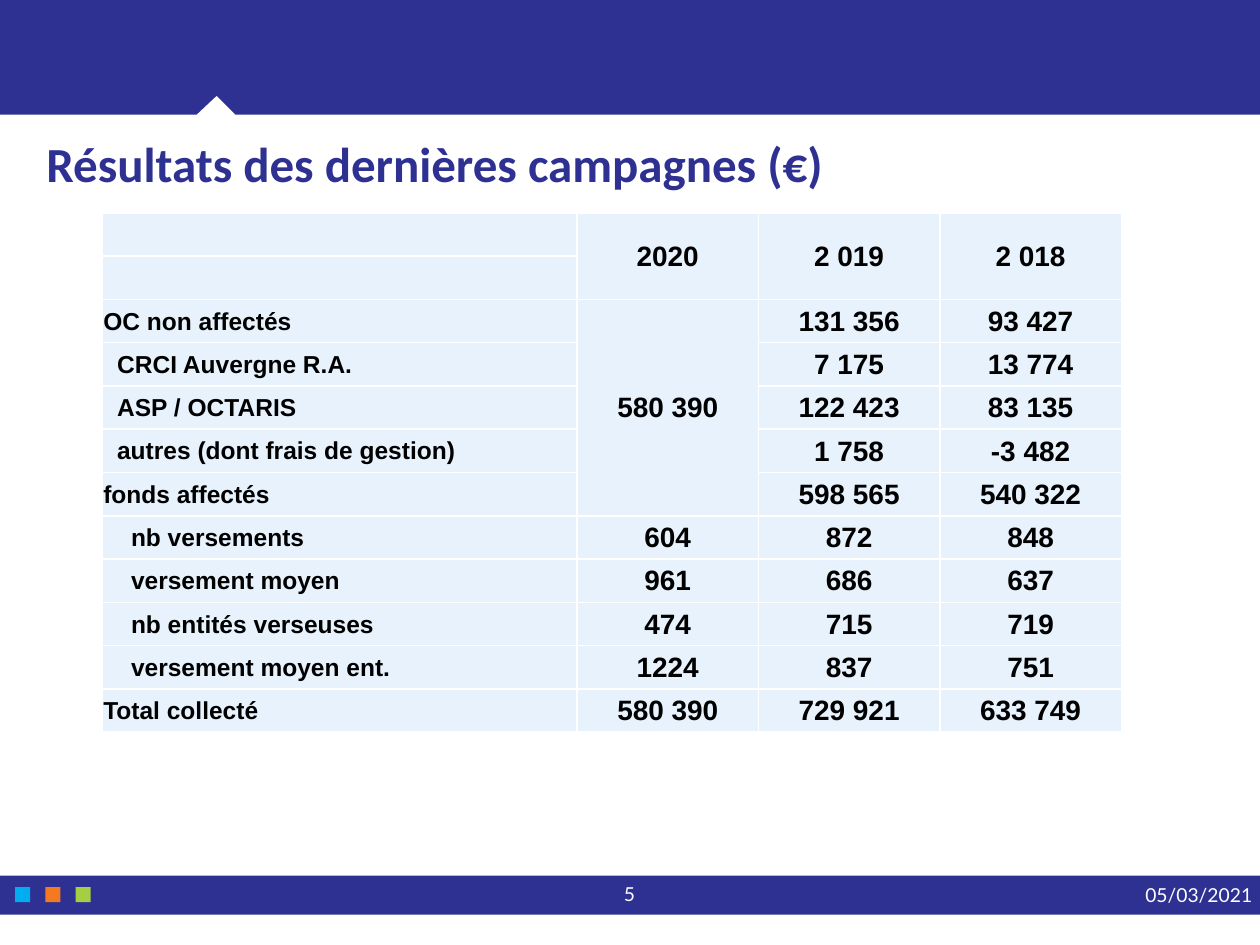
from lxml import etree
from pptx import Presentation
from pptx.dml.color import RGBColor
from pptx.enum.shapes import MSO_SHAPE
from pptx.enum.text import MSO_ANCHOR, PP_ALIGN
from pptx.oxml.ns import qn
from pptx.util import Inches, Pt

RECTANGLE = MSO_SHAPE.RECTANGLE
TOP, MIDDLE = MSO_ANCHOR.TOP, MSO_ANCHOR.MIDDLE
LEFT, CENTER, RIGHT = PP_ALIGN.LEFT, PP_ALIGN.CENTER, PP_ALIGN.RIGHT

NAVY = RGBColor(0x2E, 0x31, 0x92)
CYAN = RGBColor(0x00, 0xAE, 0xEF)
ORANGE = RGBColor(0xF4, 0x79, 0x20)
GREEN = RGBColor(0xA6, 0xCE, 0x43)
PALE_BLUE = RGBColor(0xE7, 0xF2, 0xFC)
WHITE = RGBColor(0xFF, 0xFF, 0xFF)
BLACK = RGBColor(0x00, 0x00, 0x00)

TITLE = {"name": "Calibri", "size": Pt(28), "bold": True}
FOOTER = {"name": "Lato", "size": Pt(11)}
LABEL = {"name": "Arial", "size": Pt(14), "bold": True}
VALUE = {"name": "Arial", "size": Pt(16), "bold": True}

BANNER_OUTLINE = [(0, 0), (10, 0), (10, 0.91), (1.87, 0.91),
                  (1.72, 0.76), (1.56, 0.91), (0, 0.91)]
COLUMN_WIDTHS = [3.77, 1.44, 1.44, 1.44]
INDENT_STEP = 0.11
RESULTS = [
    (0, "", "2020", "2 019", "2 018"),
    (0, "", "", "", ""),
    (0, "OC non affectés", "580 390", "131 356", "93 427"),
    (1, "CRCI Auvergne R.A.", "", "7 175", "13 774"),
    (1, "ASP / OCTARIS", "", "122 423", "83 135"),
    (1, "autres (dont frais de gestion)", "", "1 758", "-3 482"),
    (0, "fonds affectés", "", "598 565", "540 322"),
    (2, "nb versements", "604", "872", "848"),
    (2, "versement moyen", "961", "686", "637"),
    (2, "nb entités verseuses", "474", "715", "719"),
    (2, "versement moyen ent.", "1224", "837", "751"),
    (0, "Total collecté", "580 390", "729 921", "633 749"),
]
MERGES = [(0, 1, 1, 1), (0, 2, 1, 2), (0, 3, 1, 3), (2, 1, 6, 1)]


class SlideBuilder:
    """Draws the styled elements of the campaign results slide."""

    def __init__(self, slide):
        self.slide = slide

    def paint(self, shape, color):
        shape.shadow.inherit = False
        shape.fill.solid()
        shape.fill.fore_color.rgb = color
        shape.line.fill.background()

    def rectangle(self, left, top, width, height, color):
        self.paint(self.slide.shapes.add_shape(
            RECTANGLE, Inches(left), Inches(top), Inches(width), Inches(height)), color)

    def outline(self, points, color):
        start, *others = [(Inches(x), Inches(y)) for x, y in points]
        builder = self.slide.shapes.build_freeform(*start)
        builder.add_line_segments(others, close=True)
        self.paint(builder.convert_to_shape(), color)

    def add_wording(self, paragraph, wording, style, color, align):
        paragraph.alignment = align
        run = paragraph.add_run()
        run.text = wording
        for attribute, value in style.items():
            setattr(run.font, attribute, value)
        run.font.color.rgb = color

    def text(self, left, top, width, height, wording, style, color,
             align=LEFT, **frame_format):
        box = self.slide.shapes.add_textbox(
            Inches(left), Inches(top), Inches(width), Inches(height))
        for attribute, value in {"word_wrap": True, **frame_format}.items():
            setattr(box.text_frame, attribute, value)
        self.add_wording(box.text_frame.paragraphs[0], wording, style, color, align)

    def border(self, cell):
        properties = cell._tc.get_or_add_tcPr()
        for position, side in enumerate(("a:lnL", "a:lnR", "a:lnT", "a:lnB")):
            line = etree.Element(qn(side), w=str(Pt(1)))
            fill = etree.SubElement(line, qn("a:solidFill"))
            etree.SubElement(fill, qn("a:srgbClr"), val=str(WHITE))
            properties.insert(position, line)

    def cell(self, cell, wording, style, align, level=0):
        cell_format = {
            "margin_left": Inches(0.01 + level * INDENT_STEP),
            "margin_right": Inches(0.01),
            "margin_top": Inches(0.01),
            "margin_bottom": 0,
            "vertical_anchor": MIDDLE,
        }
        for attribute, value in cell_format.items():
            setattr(cell, attribute, value)
        cell.fill.solid()
        cell.fill.fore_color.rgb = PALE_BLUE
        self.border(cell)
        if wording:
            self.add_wording(cell.text_frame.paragraphs[0], wording, style, BLACK, align)

    def table(self, left, top, height, widths, rows, merges):
        table = self.slide.shapes.add_table(
            len(rows), len(widths), Inches(left), Inches(top),
            Inches(sum(widths)), Inches(height)).table
        table.first_row = table.horz_banding = False
        for column, width in zip(table.columns, widths):
            column.width = Inches(width)
        for row, (level, label, *amounts) in enumerate(rows):
            self.cell(table.cell(row, 0), label, LABEL, LEFT, level)
            for column, amount in enumerate(amounts, 1):
                self.cell(table.cell(row, column), amount, VALUE, CENTER)
        for first_row, first_column, last_row, last_column in merges:
            table.cell(first_row, first_column).merge(table.cell(last_row, last_column))


def main():
    presentation = Presentation()
    presentation.slide_width = Inches(10)
    presentation.slide_height = Inches(7.5)
    builder = SlideBuilder(presentation.slides.add_slide(presentation.slide_layouts[6]))

    builder.outline(BANNER_OUTLINE, NAVY)
    builder.rectangle(0, 6.95, 10, 0.31, NAVY)
    for position, color in enumerate((CYAN, ORANGE, GREEN)):
        builder.rectangle(0.12 + position * 0.24, 7.04, 0.12, 0.12, color)

    builder.text(0.27, 1.02, 9.46, 0.54, "Résultats des dernières campagnes (€)",
                 TITLE, NAVY, vertical_anchor=MIDDLE)
    builder.text(8.2, 6.95, 1.74, 0.31, "05/03/2021", FOOTER, WHITE, RIGHT,
                 vertical_anchor=MIDDLE, word_wrap=False, margin_left=0,
                 margin_right=0, margin_top=0, margin_bottom=0)
    builder.text(4.62, 6.95, 0.75, 0.31, "5", FOOTER, WHITE, CENTER,
                 vertical_anchor=TOP)
    builder.table(0.81, 1.69, 4.12, COLUMN_WIDTHS, RESULTS, MERGES)
    presentation.save("out.pptx")


if __name__ == "__main__":
    main()
